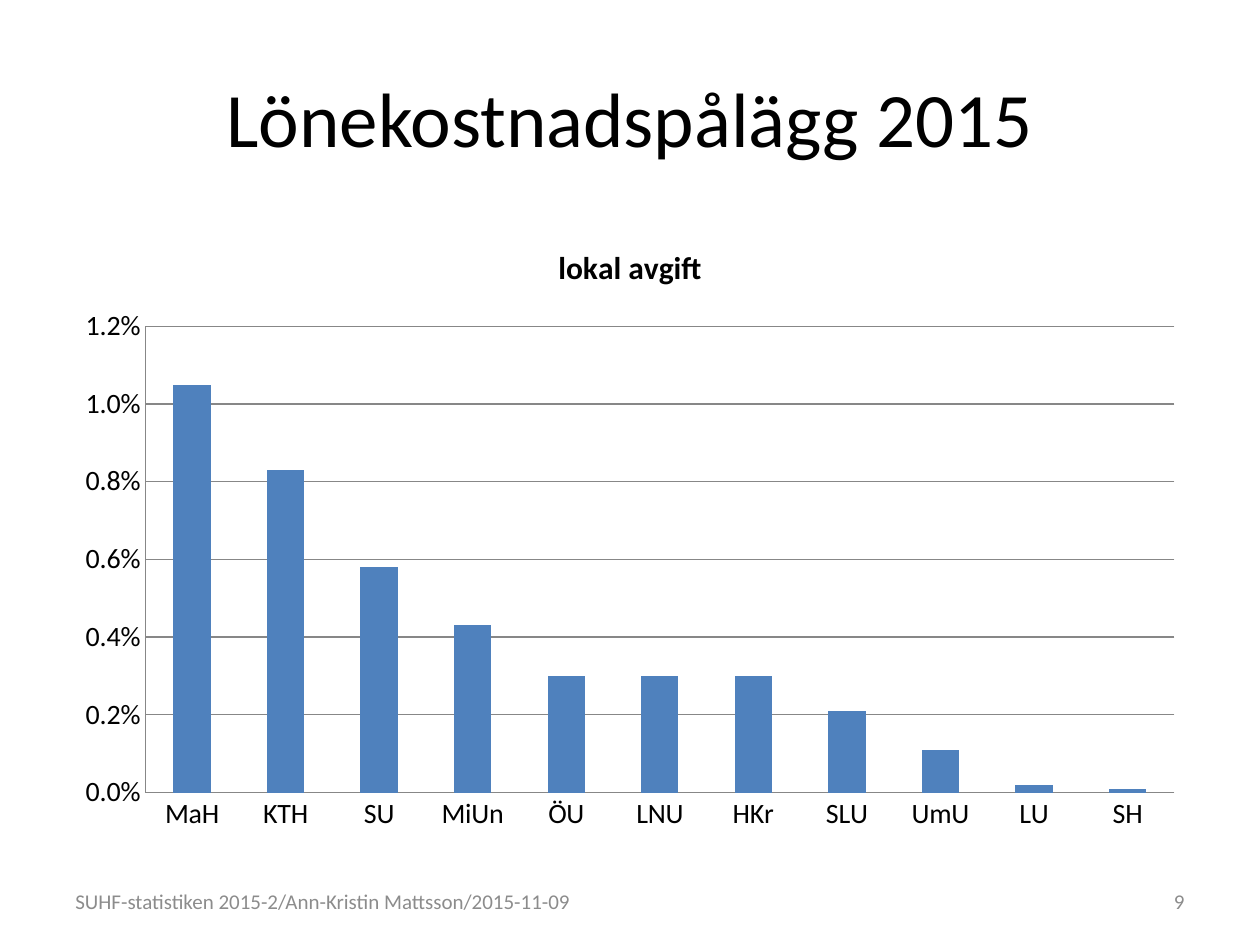
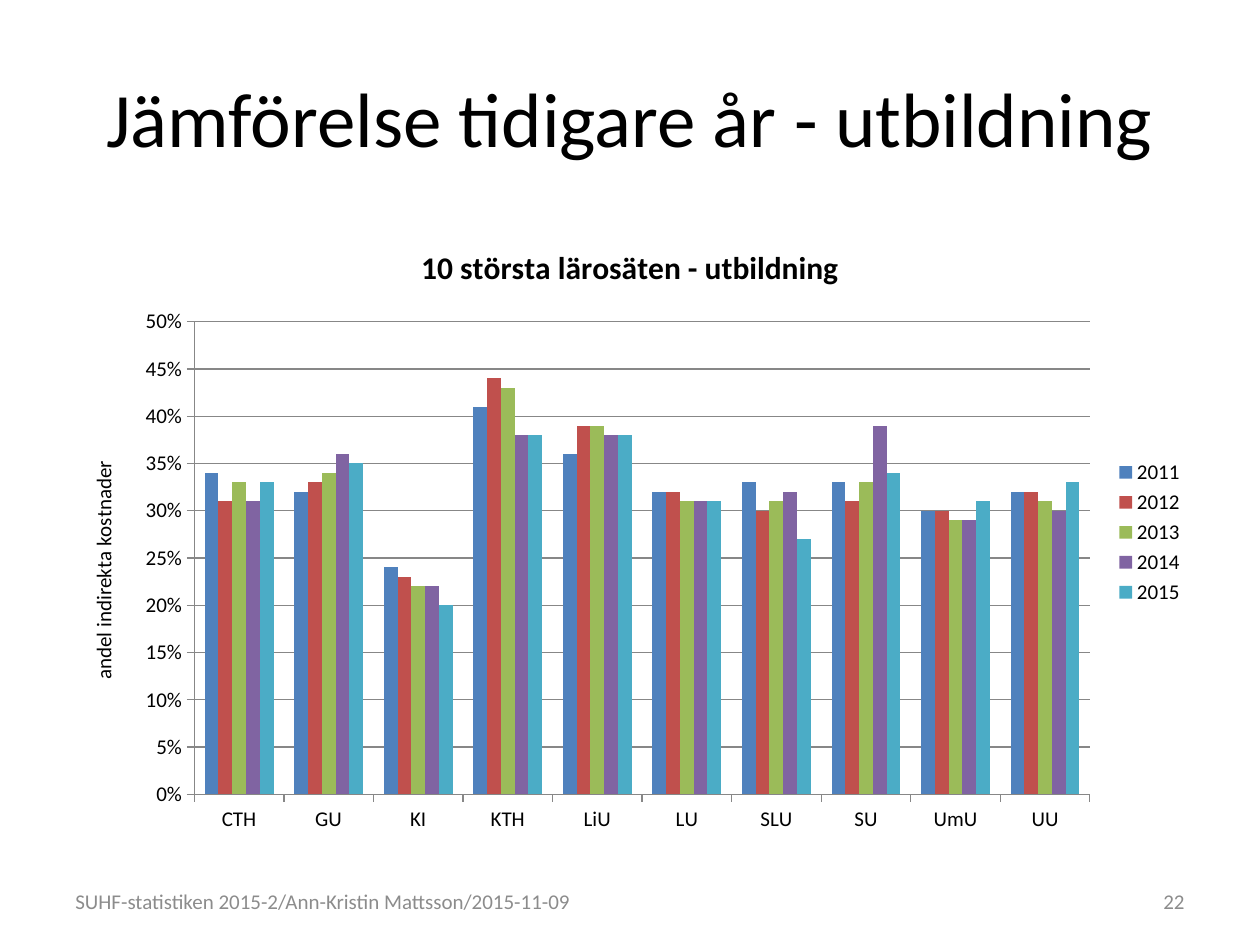
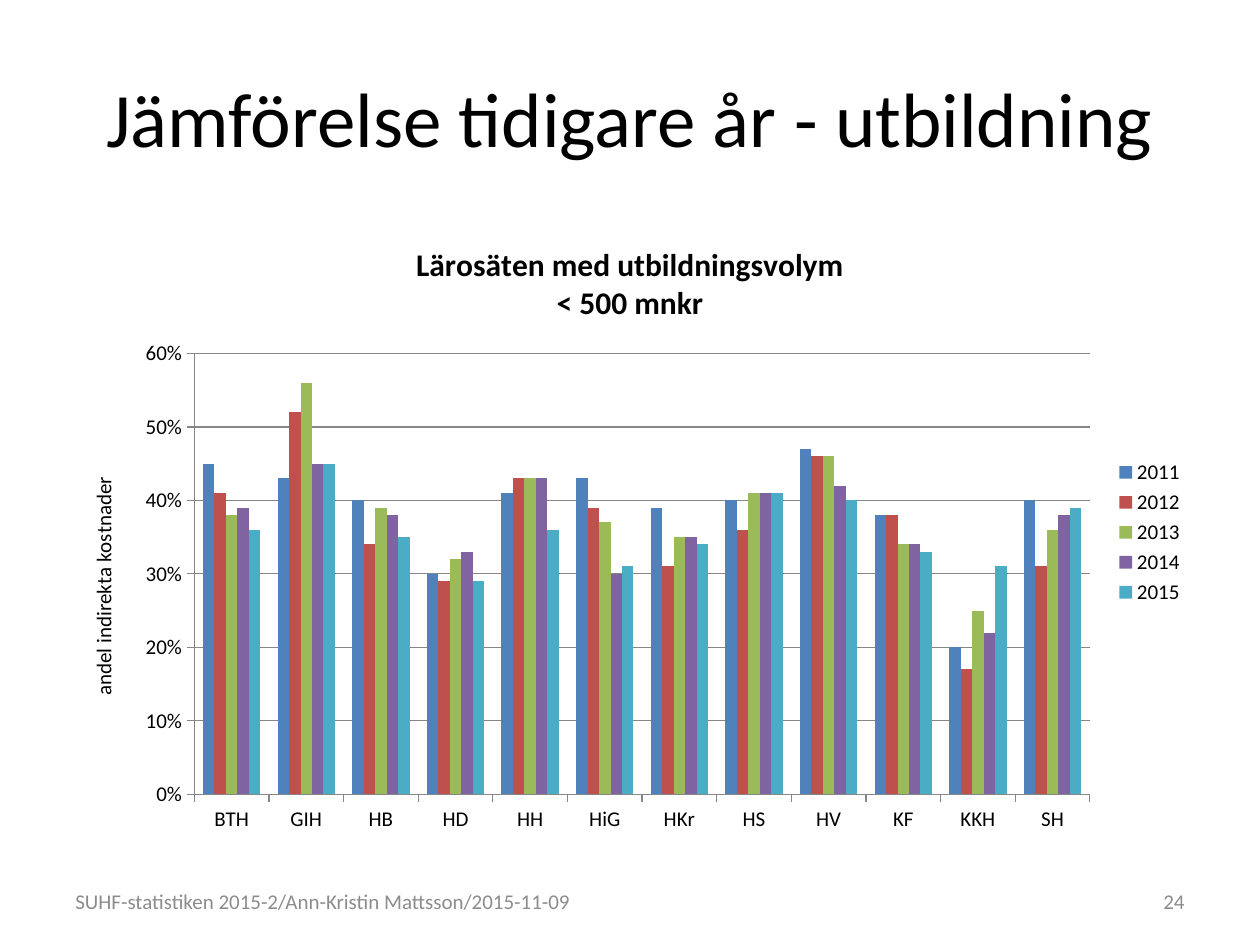
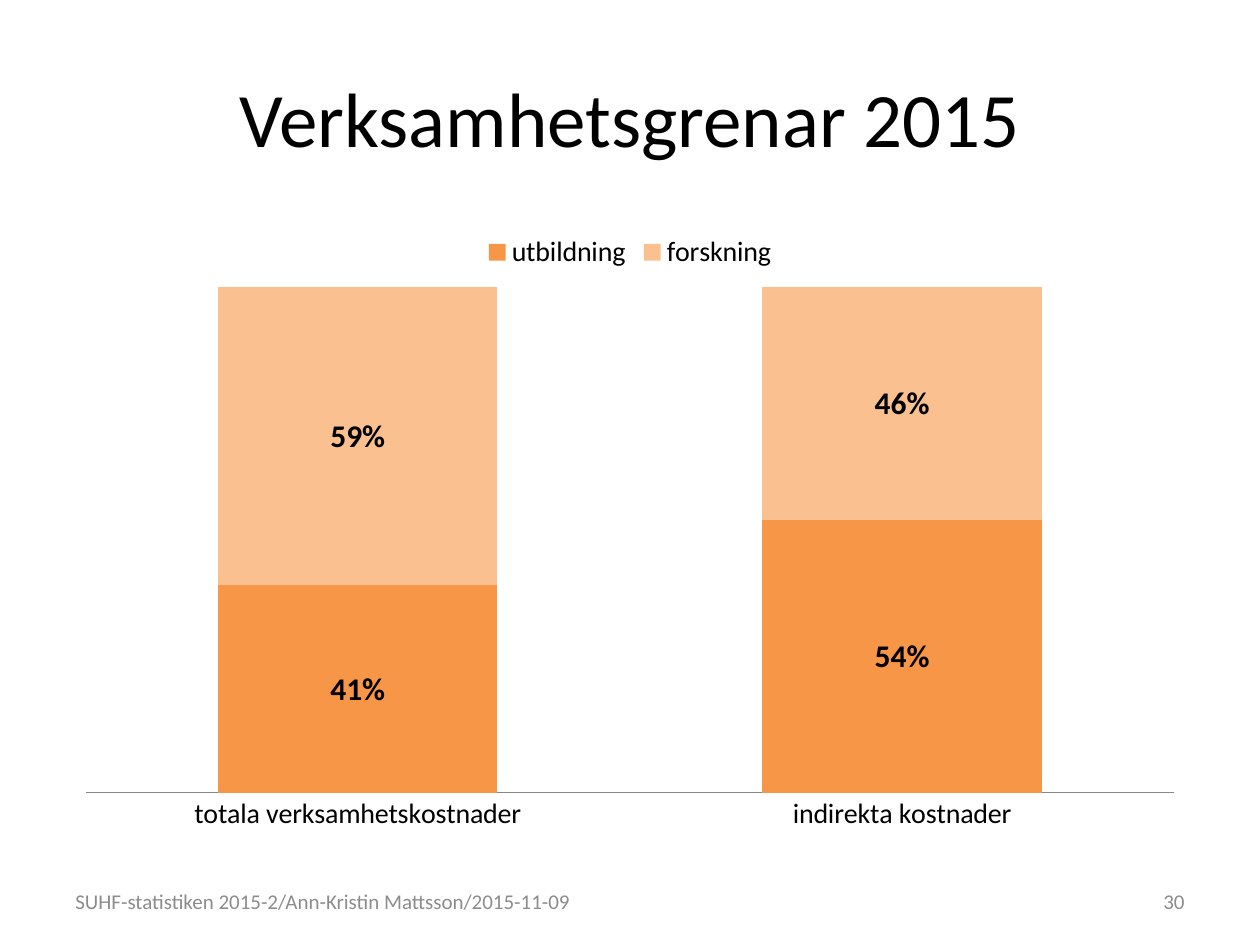
from pptx import Presentation
from pptx.chart.data import CategoryChartData
from pptx.dml.color import RGBColor
from pptx.enum.chart import (XL_CHART_TYPE, XL_LABEL_POSITION,
                             XL_LEGEND_POSITION, XL_TICK_MARK)
from pptx.enum.text import MSO_ANCHOR, PP_ALIGN
from pptx.util import Inches, Pt

FONT = "Calibri"
COLORS = {"text": "000000", "footer": "8C8C8C", "line": "878787",
          "2011": "4F81BD", "2012": "C0504D", "2013": "9BBB59",
          "2014": "8064A2", "2015": "4BACC6", "lokal avgift": "4F81BD",
          "utbildning": "F79646", "forskning": "FAC090"}
TITLE_BOX = (0.5, 0.3, 9, 1.25)
CHART_BOX = (0.5, 1.75, 9, 4.95)
FOOTER_BOX = (0.5, 6.95, 9, 0.4)
SOURCE_WIDTH, NUMBER_WIDTH = 4.66, 2.33
SOURCE = "SUHF-statistiken 2015-2/Ann-Kristin Mattsson/2015-11-09"
COMPARISON = "Jämförelse tidigare år - utbildning"

LOCAL_FEES = {"lokal avgift": [0.0105, 0.0083, 0.0058, 0.0043, 0.003, 0.003,
                               0.003, 0.0021, 0.0011, 0.0002, 0.0001]}
FEE_SCHOOLS = ["MaH", "KTH", "SU", "MiUn", "ÖU", "LNU", "HKr", "SLU", "UmU", "LU", "SH"]

LARGE_SCHOOLS = ["CTH", "GU", "KI", "KTH", "LiU", "LU", "SLU", "SU", "UmU", "UU"]
LARGE_SHARES = {
    "2011": [0.34, 0.32, 0.24, 0.41, 0.36, 0.32, 0.33, 0.33, 0.3, 0.32],
    "2012": [0.31, 0.33, 0.23, 0.44, 0.39, 0.32, 0.3, 0.31, 0.3, 0.32],
    "2013": [0.33, 0.34, 0.22, 0.43, 0.39, 0.31, 0.31, 0.33, 0.29, 0.31],
    "2014": [0.31, 0.36, 0.22, 0.38, 0.38, 0.31, 0.32, 0.39, 0.29, 0.3],
    "2015": [0.33, 0.35, 0.2, 0.38, 0.38, 0.31, 0.27, 0.34, 0.31, 0.33],
}

SMALL_SCHOOLS = ["BTH", "GIH", "HB", "HD", "HH", "HiG", "HKr", "HS", "HV", "KF", "KKH", "SH"]
SMALL_SHARES = {
    "2011": [0.45, 0.43, 0.4, 0.3, 0.41, 0.43, 0.39, 0.4, 0.47, 0.38, 0.2, 0.4],
    "2012": [0.41, 0.52, 0.34, 0.29, 0.43, 0.39, 0.31, 0.36, 0.46, 0.38, 0.17, 0.31],
    "2013": [0.38, 0.56, 0.39, 0.32, 0.43, 0.37, 0.35, 0.41, 0.46, 0.34, 0.25, 0.36],
    "2014": [0.39, 0.45, 0.38, 0.33, 0.43, 0.3, 0.35, 0.41, 0.42, 0.34, 0.22, 0.38],
    "2015": [0.36, 0.45, 0.35, 0.29, 0.36, 0.31, 0.34, 0.41, 0.4, 0.33, 0.31, 0.39],
}

BRANCH_COSTS = ["totala verksamhetskostnader", "indirekta kostnader"]
BRANCH_SHARES = {"utbildning": [0.41, 0.54], "forskning": [0.59, 0.46]}


def rgb(name):
    """Return the named colour."""
    return RGBColor.from_string(COLORS[name])


def style_font(font, size, bold=False, color="text"):
    """Apply the deck's typeface with a size, weight and colour."""
    font.name, font.size, font.bold = FONT, Pt(size), bold
    font.color.rgb = rgb(color)


def add_text(slide, box, text, size, align, color="text"):
    """Add one vertically centred line of text in a box."""
    frame = slide.shapes.add_textbox(*map(Inches, box)).text_frame
    frame.word_wrap = True
    frame.vertical_anchor = MSO_ANCHOR.MIDDLE
    line = frame.paragraphs[0]
    line.text, line.alignment = text, align
    style_font(line.font, size, color=color)


def add_footer(slide, box, number):
    """Place the source at the left and the slide number at the right."""
    left, top, width, height = box
    add_text(slide, (left, top, SOURCE_WIDTH, height), SOURCE, 12,
             PP_ALIGN.LEFT, "footer")
    add_text(slide, (left + width - NUMBER_WIDTH, top, NUMBER_WIDTH, height),
             str(number), 12, PP_ALIGN.RIGHT, "footer")


def start_slide(deck, title, number):
    """Add a slide with its title and footer."""
    slide = deck.slides.add_slide(deck.slide_layouts[6])
    add_text(slide, TITLE_BOX, title, 44, PP_ALIGN.CENTER)
    add_footer(slide, FOOTER_BOX, number)
    return slide


def write_heading(frame, text, size, bold):
    """Write a chart or axis title, one paragraph per line."""
    frame.text = text
    for line in frame.paragraphs:
        style_font(line.font, size, bold)


def style_axis(axis, size, tick):
    """Set an axis's line, tick marks and label font."""
    axis.major_tick_mark, axis.minor_tick_mark = tick, XL_TICK_MARK.NONE
    axis.format.line.color.rgb = rgb("line")
    style_font(axis.tick_labels.font, size)


def add_columns(slide, box, categories, shares, kind, size, tick, top, step,
                number_format="0%", gap=150):
    """Add a column chart with coloured series and scaled axes."""
    data = CategoryChartData(number_format=number_format)
    data.categories = categories
    for name, values in shares.items():
        data.add_series(name, values)
    chart = slide.shapes.add_chart(kind, *map(Inches, box), data).chart
    style_font(chart.font, 10)
    chart.has_title = chart.has_legend = False
    plot = chart.plots[0]
    plot.vary_by_categories, plot.gap_width = False, gap
    for series in plot.series:
        series.format.fill.solid()
        series.format.fill.fore_color.rgb = rgb(series.name)
        series.invert_if_negative = False
    style_axis(chart.category_axis, size, tick)
    scale = chart.value_axis
    style_axis(scale, size, tick)
    scale.minimum_scale, scale.maximum_scale, scale.major_unit = 0, top, step
    scale.tick_labels.number_format = number_format
    scale.tick_labels.number_format_is_linked = False
    scale.major_gridlines.format.line.color.rgb = rgb("line")
    return chart


def add_legend(chart, position, size):
    """Show the legend beside the plot."""
    chart.has_legend = True
    chart.legend.position = position
    chart.legend.include_in_layout = False
    style_font(chart.legend.font, size)


def fee_slide(deck):
    """Build the slide on local payroll fees."""
    slide = start_slide(deck, "Lönekostnadspålägg 2015", 9)
    chart = add_columns(slide, CHART_BOX, FEE_SCHOOLS, LOCAL_FEES,
                        XL_CHART_TYPE.COLUMN_CLUSTERED, 16, XL_TICK_MARK.NONE,
                        0.012, 0.002, "0.0%")
    write_heading(chart.chart_title.text_frame, "lokal avgift", 18, True)


def comparison_slide(deck, number, heading, schools, shares, top, step):
    """Build a slide comparing indirect costs over the years."""
    slide = start_slide(deck, COMPARISON, number)
    chart = add_columns(slide, CHART_BOX, schools, shares,
                        XL_CHART_TYPE.COLUMN_CLUSTERED, 12, XL_TICK_MARK.OUTSIDE,
                        top, step)
    write_heading(chart.chart_title.text_frame, heading, 18, True)
    write_heading(chart.value_axis.axis_title.text_frame,
                  "andel indirekta kostnader", 12, False)
    add_legend(chart, XL_LEGEND_POSITION.RIGHT, 12)


def branch_slide(deck):
    """Build the slide splitting costs between education and research."""
    slide = start_slide(deck, "Verksamhetsgrenar 2015", 30)
    chart = add_columns(slide, CHART_BOX, BRANCH_COSTS, BRANCH_SHARES,
                        XL_CHART_TYPE.COLUMN_STACKED_100, 16, XL_TICK_MARK.NONE,
                        1, 0.1, gap=95)
    chart.value_axis.visible = False
    chart.value_axis.has_major_gridlines = False
    chart.plots[0].overlap = 100
    add_legend(chart, XL_LEGEND_POSITION.TOP, 16)
    for series in chart.plots[0].series:
        labels = series.data_labels
        labels.show_value = True
        labels.number_format, labels.number_format_is_linked = "0%", False
        labels.position = XL_LABEL_POSITION.CENTER
        style_font(labels.font, 18, True)


def main():
    """Build and save the deck."""
    deck = Presentation()
    deck.slide_width, deck.slide_height = Inches(10), Inches(7.5)
    fee_slide(deck)
    comparison_slide(deck, 22, "10 största lärosäten - utbildning",
                     LARGE_SCHOOLS, LARGE_SHARES, 0.5, 0.05)
    comparison_slide(deck, 24, "Lärosäten med utbildningsvolym\n< 500 mnkr",
                     SMALL_SCHOOLS, SMALL_SHARES, 0.6, 0.1)
    branch_slide(deck)
    deck.save("out.pptx")


if __name__ == "__main__":
    main()
